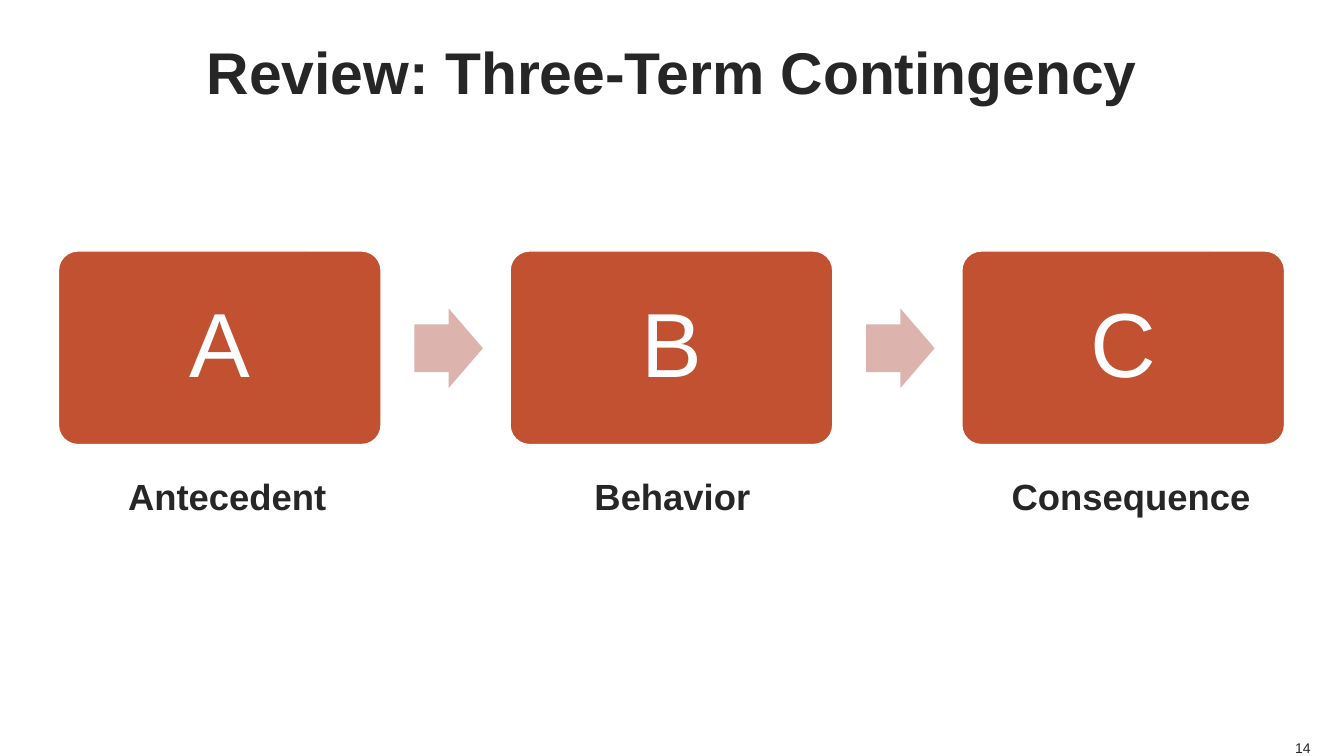
from pptx import Presentation
from pptx.dml.color import RGBColor
from pptx.enum import shapes, text
from pptx.util import Inches, Pt

COLORS = {"ink": "262626", "card": "C25131", "arrow": "DDB3AE", "white": "FFFFFF"}


def write(sp, content, size, color, bold=False, align=text.PP_ALIGN.CENTER,
          anchor=text.MSO_ANCHOR.MIDDLE, margin=0.0):
    tf = sp.text_frame
    tf.text = content
    tf.vertical_anchor = anchor
    tf.margin_left = tf.margin_right = Inches(margin)
    tf.margin_top = tf.margin_bottom = Inches(margin)
    p = tf.paragraphs[0]
    p.alignment = align
    f = p.runs[0].font
    f.name, f.size, f.bold = "Arial", Pt(size), bold
    f.color.rgb = RGBColor.from_string(COLORS[color])
    return tf


def add_block(kind, x, y, w, h, fill):
    sp = s.shapes.add_shape(kind, Inches(x), Inches(y), Inches(w), Inches(h))
    sp.shadow.inherit = False
    sp.fill.solid()
    sp.fill.fore_color.rgb = RGBColor.from_string(COLORS[fill])
    return sp


prs = Presentation()
prs.slide_width, prs.slide_height = Inches(13.33), Inches(7.5)
s = prs.slides.add_slide(prs.slide_layouts[5])

# Title
title = s.shapes.title
title.left, title.top = Inches(0.5), Inches(0)
title.width, title.height = Inches(12.33), Inches(1.4)
write(title, "Review: Three-Term Contingency", 42, "ink", bold=True).word_wrap = True

# Cards with an arrow between neighbours
left, pitch, letters = 0.58, 4.48, "ABC"
for i, letter in enumerate(letters):
    x = left + i * pitch
    card = add_block(shapes.MSO_SHAPE.ROUNDED_RECTANGLE, x, 2.49, 3.2, 1.92, "card")
    card.adjustments[0] = 0.1
    card.line.color.rgb = RGBColor.from_string(COLORS["white"])
    card.line.width = Pt(1)
    tf = write(card, letter, 65, "white", margin=0.27)
    tf.paragraphs[0].line_spacing = 0.9
    if i < len(letters) - 1:
        arrow = add_block(shapes.MSO_SHAPE.RIGHT_ARROW, x + 3.53, 3.06, 0.68, 0.79, "arrow")
        arrow.adjustments[0], arrow.adjustments[1] = 0.6, 0.5
        arrow.line.fill.background()

# Term names under the cards
for name, x, w in (("Antecedent", 1.16, 2.19), ("Behavior", 5.79, 1.76),
                   ("Consequence", 9.85, 2.74)):
    label = s.shapes.add_textbox(Inches(x), Inches(4.65), Inches(w), Inches(0.54))
    write(label, name, 26, "ink", bold=True, margin=0.05).word_wrap = True

# Slide number
number = s.shapes.add_textbox(Inches(12.83), Inches(7.33), Inches(0.17), Inches(0.17))
write(number, "14", 10, "ink", align=text.PP_ALIGN.RIGHT,
      anchor=text.MSO_ANCHOR.BOTTOM).word_wrap = False

prs.save("out.pptx")
